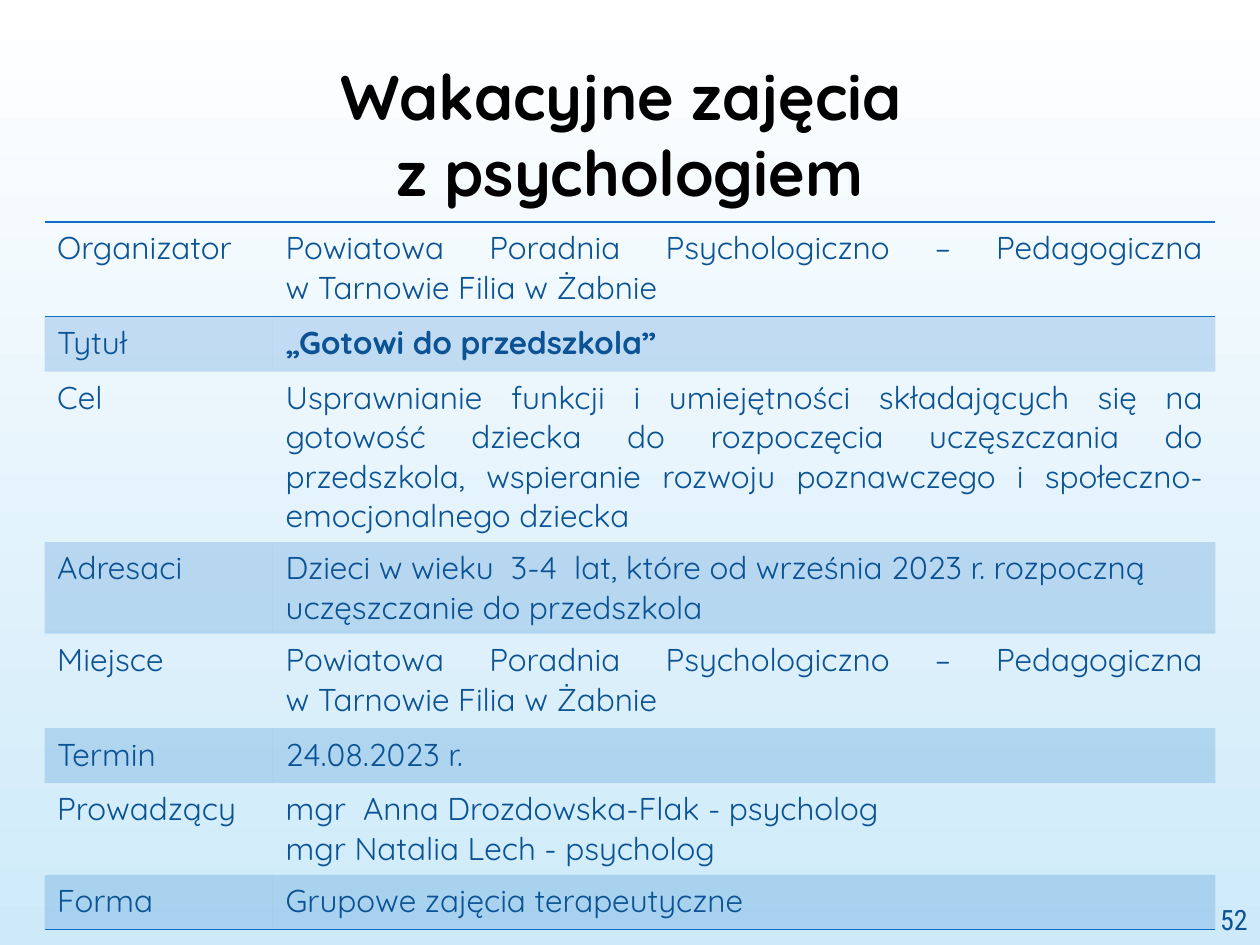
"""Build the slide about holiday classes with a psychologist."""
from pptx import Presentation
from pptx.dml.color import RGBColor
from pptx.enum.text import MSO_ANCHOR, PP_ALIGN
from pptx.oxml import parse_xml
from pptx.oxml.ns import nsdecls, qn
from pptx.util import Pt
from lxml.etree import SubElement

BLACK = RGBColor(0, 0, 0)
WHITE = RGBColor(0xFF, 0xFF, 0xFF)
SKY = RGBColor(0xCE, 0xEA, 0xF9)
BLUE = RGBColor(0x0F, 0x6F, 0xC6)
NAVY = RGBColor(0x0B, 0x53, 0x94)
PLAIN = "{2D5ABB26-0587-4C30-8999-92F81FD0307C}"
OFFICE = "Powiatowa Poradnia Psychologiczno – Pedagogiczna\vw Tarnowie Filia w Żabnie "

ROWS = [
    ("Organizator", OFFICE, 54),
    ("Tytuł", "„Gotowi do przedszkola”", 31.4),
    ("Cel", "Usprawnianie funkcji i umiejętności składających się na gotowość "
     "dziecka do rozpoczęcia uczęszczania do przedszkola, wspieranie rozwoju "
     "poznawczego i społeczno-emocjonalnego dziecka", 94.3),
    ("Adresaci", "Dzieci w wieku  3-4  lat, które od września 2023 r. rozpoczną "
     "uczęszczanie do przedszkola", 51.1),
    ("Miejsce", OFFICE, 54),
    ("Termin", "24.08.2023 r.", 31.4),
    ("Prowadzący", "mgr  Anna Drozdowska-Flak - psycholog\n"
     "mgr Natalia Lech - psycholog", 51.1),
    ("Forma", "Grupowe zajęcia terapeutyczne", 31.4),
]
JUST = {"Organizator", "Cel", "Miejsce"}
EDGES = {"Organizator": ("lnT", "lnB"), "Forma": ("lnB",)}


def style(para, name, size, color, bold=False):
    font = para.font
    font.name, font.size, font.bold = name, Pt(size), bold
    font.color.rgb = color


deck = Presentation()
deck.slide_width, deck.slide_height = Pt(720), Pt(540)
slide = deck.slides.add_slide(deck.slide_layouts[5])

back = slide.background.fill
back.gradient()
back.gradient_angle = 270
for stop, color, place in zip(back.gradient_stops, (WHITE, SKY), (0, 1)):
    stop.color.rgb = color
    stop.position = place

title = slide.shapes.title
title.left, title.top, title.width, title.height = Pt(25.5), Pt(25.7), Pt(669), Pt(101)
frame = title.text_frame
frame.text = "Wakacyjne zajęcia \vz psychologiem"
frame.vertical_anchor = MSO_ANCHOR.MIDDLE
frame.paragraphs[0].alignment = PP_ALIGN.CENTER
style(frame.paragraphs[0], "Quicksand", 36, BLACK, True)

high = sum(row[2] for row in ROWS)
table = slide.shapes.add_table(len(ROWS), 2, Pt(25.5), Pt(126.9), Pt(669), Pt(high)).table
table.first_row = table.horz_banding = False
table._tbl.tblPr.find(qn("a:tableStyleId")).text = PLAIN
table.columns[0].width, table.columns[1].width = Pt(130.5), Pt(538.5)

for num, (label, text, tall) in enumerate(ROWS):
    table.rows[num].height = Pt(tall)
    for col, words in enumerate((label, text)):
        cell = table.cell(num, col)
        cell.text = words
        for para in cell.text_frame.paragraphs:
            just = col == 1 and label in JUST
            para.alignment = PP_ALIGN.JUSTIFY if just else PP_ALIGN.LEFT
            style(para, "Quicksand", 18, NAVY, col == 1 and label == "Tytuł")
        props = cell._tc.get_or_add_tcPr()
        if num % 2:
            cell.fill.solid()
            cell.fill.fore_color.rgb = BLUE
            tint = props.find(".//" + qn("a:srgbClr"))
            SubElement(tint, qn("a:alpha")).set("val", "20000")
        else:
            cell.fill.background()
        for spot, edge in enumerate(EDGES.get(label, ())):
            props.insert(spot, parse_xml(
                f'<a:{edge} {nsdecls("a")} w="{Pt(1)}"><a:solidFill>'
                f'<a:srgbClr val="{BLUE}"/></a:solidFill></a:{edge}>'))

page = slide.shapes.add_textbox(Pt(666), Pt(510.5), Pt(54), Pt(29.5)).text_frame
page.word_wrap = True
page.vertical_anchor = MSO_ANCHOR.MIDDLE
page.text = "52"
page.paragraphs[0].alignment = PP_ALIGN.RIGHT
style(page.paragraphs[0], "Roboto Condensed", 16, NAVY)

deck.save("out.pptx")
